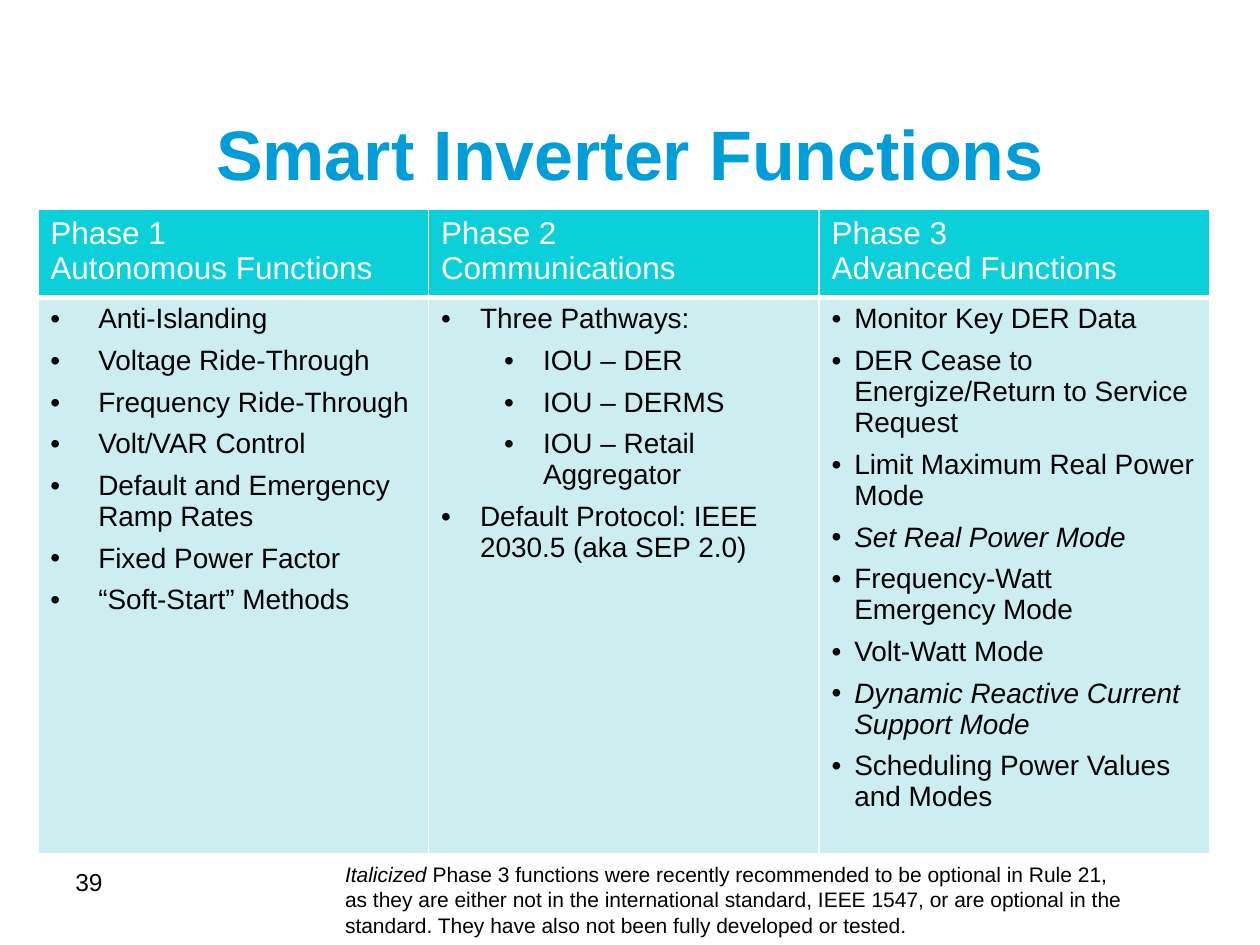
import lxml.etree
import pptx
import pptx.dml.color
import pptx.enum.text
import pptx.oxml.ns
import pptx.util

PX = 9144
FONT = "Arial"
BLUE = pptx.dml.color.RGBColor(0x00, 0x9D, 0xD9)
TEAL = pptx.dml.color.RGBColor(0x0B, 0xD0, 0xD9)
PALE = pptx.dml.color.RGBColor(0xCC, 0xEE, 0xF1)
WHITE = pptx.dml.color.RGBColor(0xFF, 0xFF, 0xFF)
BLACK = pptx.dml.color.RGBColor(0x00, 0x00, 0x00)

ROW_HEIGHTS = (66, 420)
PHASES = [
    ("Phase 1\nAutonomous Functions", 38, [
        "Anti-Islanding",
        "Voltage Ride-Through",
        "Frequency Ride-Through",
        "Volt/VAR Control",
        "Default and Emergency Ramp Rates",
        "Fixed Power Factor",
        "“Soft-Start” Methods",
    ]),
    ("Phase 2\nCommunications", 31, [
        "Three Pathways:",
        "IOU – DER",
        "IOU – DERMS",
        "IOU – Retail Aggregator",
        "Default Protocol: IEEE 2030.5 (aka SEP 2.0)",
    ]),
    ("Phase 3\nAdvanced Functions", 18, [
        "Monitor Key DER Data",
        "DER Cease to Energize/Return to Service Request",
        "Limit Maximum Real Power Mode",
        "Set Real Power Mode",
        "Frequency-Watt Emergency Mode",
        "Volt-Watt Mode",
        "Dynamic Reactive Current Support Mode",
        "Scheduling Power Values and Modes",
    ]),
]
OPTIONAL = {"Set Real Power Mode", "Dynamic Reactive Current Support Mode"}
NOTE = [
    ("Italicized", True),
    (" Phase 3 functions were recently recommended to be optional in Rule 21, "
     "as they are either not in the international standard, IEEE 1547, or are "
     "optional in the standard. They have also not been fully developed or tested.", False),
]


def emu(box):
    """Turn a box of px lengths into EMU."""
    return [length * PX for length in box]


def add_element(parent, tag, **attributes):
    """Append a drawing element with the given attributes."""
    element = lxml.etree.SubElement(parent, pptx.oxml.ns.qn(tag))
    for name, value in attributes.items():
        element.set(name, str(value))
    return element


def style(span, size, color, bold=False, italic=False):
    """Format one run of text."""
    span.font.name = FONT
    span.font.size = pptx.util.Pt(size)
    span.font.color.rgb = color
    span.font.bold = bold
    span.font.italic = italic


def add_bullet(para, margin, indent):
    """Give a paragraph a hanging round bullet."""
    properties = para._p.get_or_add_pPr()
    properties.set("marL", str(margin * PX))
    properties.set("indent", str(-indent * PX))
    add_element(properties, "a:buFont", typeface=FONT)
    add_element(properties, "a:buChar", char="•")
    para.space_after = pptx.util.Pt(6)


def paint_cell(cell, fill, bottom_width):
    """Set the white borders and the fill of a cell."""
    properties = cell._tc.get_or_add_tcPr()
    for side, width in (("L", 1), ("R", 1), ("T", 1), ("B", bottom_width)):
        line = add_element(properties, f"a:ln{side}", w=pptx.util.Pt(width))
        add_element(add_element(line, "a:solidFill"), "a:srgbClr", val=WHITE)
    cell.fill.solid()
    cell.fill.fore_color.rgb = fill


def fill_header(cell, heading):
    """Write a phase heading into its cell."""
    paint_cell(cell, TEAL, 3)
    cell.text_frame.text = heading
    for para in cell.text_frame.paragraphs:
        style(para.runs[0], 18, WHITE)


def fill_functions(cell, functions, indent):
    """Write the bulleted functions of a phase into its cell."""
    paint_cell(cell, PALE, 1)
    cell.text_frame.text = "\n".join(functions)
    for para, function in zip(cell.text_frame.paragraphs, functions):
        para.level = int(function.startswith("IOU"))
        add_bullet(para, indent + 50 * para.level, indent)
        style(para.runs[0], 16, BLACK, italic=function in OPTIONAL)


def add_title(page, box):
    """Place the slide title in its placeholder."""
    title = page.shapes.title
    title.left, title.top, title.width, title.height = emu(box)
    title.text_frame.text = "Smart Inverter Functions"
    title.text_frame.vertical_anchor = pptx.enum.text.MSO_ANCHOR.MIDDLE
    para = title.text_frame.paragraphs[0]
    para.alignment = pptx.enum.text.PP_ALIGN.CENTER
    style(para.runs[0], 40, BLUE, bold=True)


def add_phase_table(page, box):
    """Place the table with one column for each phase."""
    table = page.shapes.add_table(2, len(PHASES), *emu(box)).table
    for row, height in zip(table.rows, ROW_HEIGHTS):
        row.height = height * PX
    for column, (heading, indent, functions) in enumerate(PHASES):
        fill_header(table.cell(0, column), heading)
        fill_functions(table.cell(1, column), functions, indent)


def add_text(page, box, spans, size):
    """Place a wrapped text box made of plain and italic spans."""
    frame = page.shapes.add_textbox(*emu(box)).text_frame
    frame.word_wrap = True
    for text, italic in spans:
        span = frame.paragraphs[0].add_run()
        span.text = text
        style(span, size, BLACK, italic=italic)


def main():
    """Build and save the slide."""
    deck = pptx.Presentation()
    deck.slide_width, deck.slide_height = emu((1000, 750))
    page = deck.slides.add_slide(deck.slide_layouts.get_by_name("Title Only"))
    add_title(page, (50, 67, 900, 108))
    add_text(page, (50, 683, 183, 52), [("39", False)], 14)
    add_phase_table(page, (30, 166, 930, sum(ROW_HEIGHTS)))
    add_text(page, (264, 679, 639, 71), NOTE, 12)
    deck.save("out.pptx")


if __name__ == "__main__":
    main()
